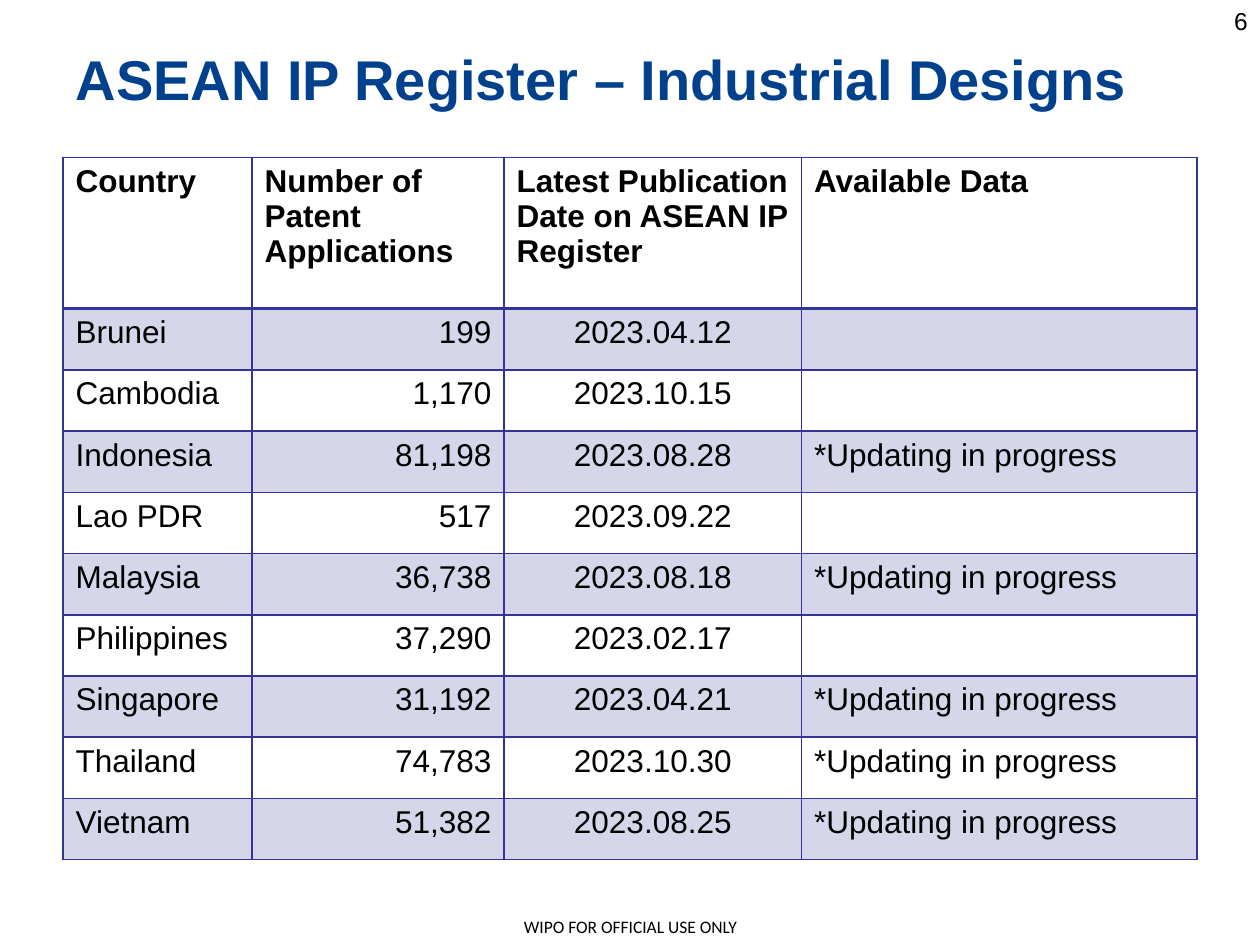
from lxml.etree import SubElement
from pptx import Presentation
from pptx.dml.color import RGBColor
from pptx.enum.text import MSO_ANCHOR as Anchor, MSO_AUTO_SIZE as AutoSize, PP_ALIGN as Align
from pptx.oxml import parse_xml
from pptx.oxml.ns import nsdecls, qn
from pptx.util import Pt

BLACK = RGBColor(0x00, 0x00, 0x00)
TITLE_BLUE = RGBColor(0x00, 0x40, 0x8C)
INDIGO = RGBColor(0x33, 0x33, 0x99)
BAND_ALPHA = 20000

TITLE_FONT = {"name": "Arial", "size": Pt(32), "bold": True}
HEADER_FONT = {"name": "Arial", "size": Pt(18), "bold": True}
BODY_FONT = {"name": "Arial", "size": Pt(18), "bold": False}
NUMBER_FONT = {"name": "Arial", "size": Pt(14)}
FOOTER_FONT = {"name": "Calibri", "size": Pt(10)}
NO_INSETS = {"margin_left": 0, "margin_top": 0, "margin_right": 0, "margin_bottom": 0}

COLUMN_WIDTHS = (108, 144, 170, 226)
COLUMN_ALIGNS = (Align.LEFT, Align.RIGHT, Align.CENTER, Align.LEFT)
HEADER_HEIGHT = 86.4
UPDATING = "*Updating in progress"
HEADINGS = (
    "Country",
    "Number of Patent Applications",
    "Latest Publication Date on ASEAN IP Register",
    "Available Data",
)
REGISTER = (
    ("Brunei", "199", "2023.04.12", ""),
    ("Cambodia", "1,170", "2023.10.15", ""),
    ("Indonesia", "81,198", "2023.08.28", UPDATING),
    ("Lao PDR", "517", "2023.09.22", ""),
    ("Malaysia", "36,738", "2023.08.18", UPDATING),
    ("Philippines", "37,290", "2023.02.17", ""),
    ("Singapore", "31,192", "2023.04.21", UPDATING),
    ("Thailand", "74,783", "2023.10.30", UPDATING),
    ("Vietnam", "51,382", "2023.08.25", UPDATING),
)


def apply_format(target, values):
    """Set each named attribute on the target."""
    for name, value in values.items():
        setattr(target, name, value)


def write_text(frame, text, font, color=BLACK, align=Align.LEFT):
    """Fill a text frame with one formatted paragraph."""
    frame.text = text
    paragraph = frame.paragraphs[0]
    paragraph.alignment = align
    apply_format(paragraph.font, font)
    paragraph.font.color.rgb = color


def add_title(slide, box):
    """Place the slide title in its placeholder."""
    title = slide.shapes.title
    apply_format(title, dict(zip(("left", "top", "width", "height"), map(Pt, box))))
    write_text(title.text_frame, "ASEAN IP Register – Industrial Designs", TITLE_FONT, TITLE_BLUE)
    apply_format(title.text_frame, {"vertical_anchor": Anchor.MIDDLE, "auto_size": AutoSize.NONE})


def add_label(slide, box, text, font, align, frame_format):
    """Place a small page label such as the number or the footer."""
    frame = slide.shapes.add_textbox(*map(Pt, box)).text_frame
    apply_format(frame, {"word_wrap": True, **frame_format})
    write_text(frame, text, font, align=align)


def shade_cell(cell, banded):
    """Give a cell a translucent band or no fill."""
    if not banded:
        cell.fill.background()
        return
    cell.fill.solid()
    cell.fill.fore_color.rgb = INDIGO
    color = next(cell._tc.tcPr.iter(qn("a:srgbClr")))
    SubElement(color, qn("a:alpha"), val=str(BAND_ALPHA))


def border_cell(cell, top, bottom):
    """Draw the four cell edges with the given top and bottom weights."""
    weights = {"lnL": 1, "lnR": 1, "lnT": top, "lnB": bottom}
    for position, (edge, weight) in enumerate(weights.items()):
        line = parse_xml(
            f'<a:{edge} {nsdecls("a")} w="{Pt(weight)}"><a:solidFill>'
            f'<a:srgbClr val="{INDIGO}"/></a:solidFill></a:{edge}>'
        )
        cell._tc.tcPr.insert(position, line)


def add_register_table(slide, box):
    """Build the country table with a header and alternating bands."""
    records = (HEADINGS, *REGISTER)
    table = slide.shapes.add_table(len(records), len(HEADINGS), *map(Pt, box)).table
    table.horz_banding = False
    for column, width in zip(table.columns, COLUMN_WIDTHS):
        column.width = Pt(width)
    body_height = (box[3] - HEADER_HEIGHT) / len(REGISTER)
    for index, (row, record) in enumerate(zip(table.rows, records)):
        is_header = index == 0
        row.height = Pt(HEADER_HEIGHT if is_header else body_height)
        for cell, text, align in zip(row.cells, record, COLUMN_ALIGNS):
            font = HEADER_FONT if is_header else BODY_FONT
            write_text(cell.text_frame, text, font, align=Align.LEFT if is_header else align)
            shade_cell(cell, index % 2 == 1)
            border_cell(cell, 2 if index == 1 else 1, 2 if is_header else 1)


def main():
    """Assemble and save the slide."""
    deck = Presentation()
    apply_format(deck, {"slide_width": Pt(720), "slide_height": Pt(540)})
    slide = deck.slides.add_slide(deck.slide_layouts[5])
    footer_format = {"vertical_anchor": Anchor.MIDDLE, **NO_INSETS}
    add_label(slide, (286.5, 519, 147.5, 21), "WIPO FOR OFFICIAL USE ONLY",
              FOOTER_FONT, Align.CENTER, footer_format)
    add_label(slide, (552, 0, 168, 37.5), "6", NUMBER_FONT, Align.RIGHT, {})
    add_title(slide, (36, 22.5, 648, 44.5))
    add_register_table(slide, (36, 90, 648, 401.4))
    deck.save("out.pptx")


if __name__ == "__main__":
    main()
